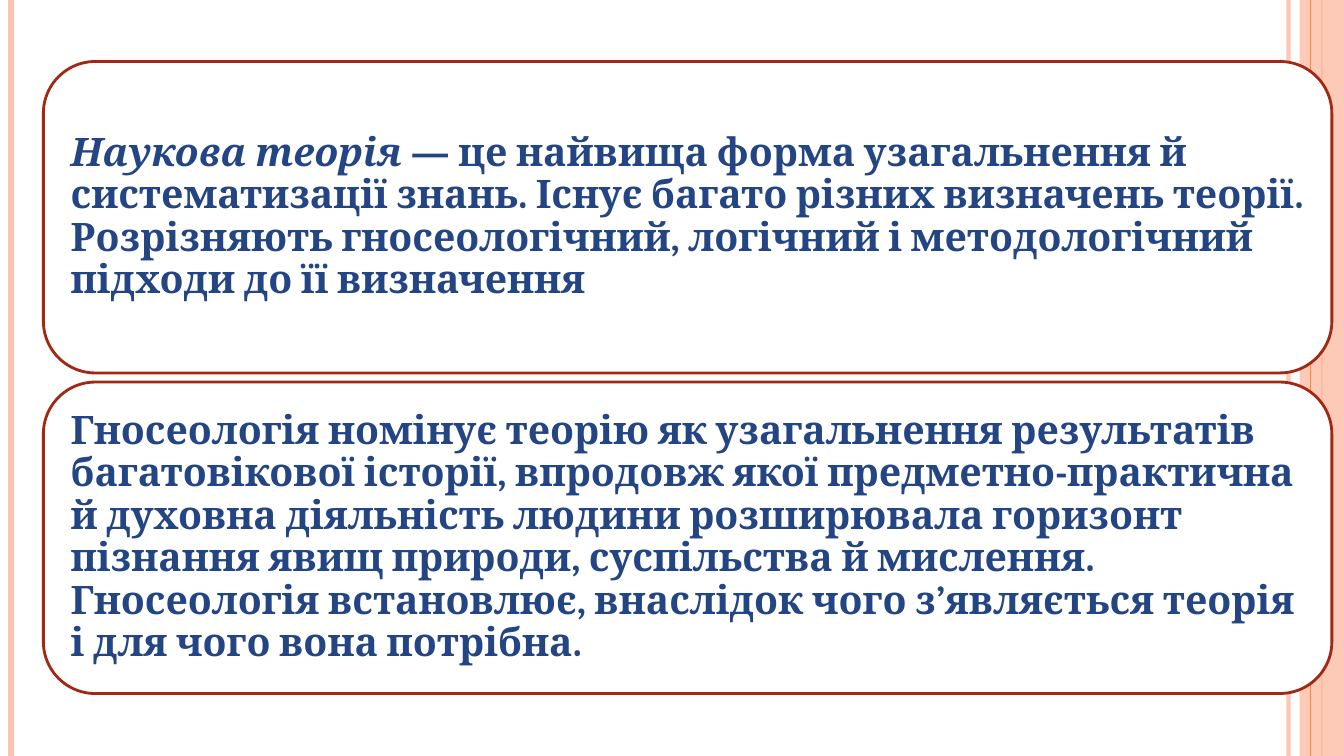
from lxml.etree import SubElement
from pptx import Presentation
from pptx.dml.color import RGBColor
from pptx.enum.shapes import MSO_CONNECTOR, MSO_SHAPE
from pptx.enum.text import MSO_ANCHOR, PP_ALIGN
from pptx.oxml.ns import qn
from pptx.util import Inches, Pt

WIDTH, HEIGHT = 13.33, 7.5
PEACH, ORANGE, RED, BLUE, WHITE = "FEC3AE", "FE8637", "A22814", "244583", "FFFFFF"

# Stripes: x, colour, width in points, opacity in percent
BACK_LINES = [(12.78, PEACH, 3, 93), (0.11, PEACH, 4.5, 100), (13.11, ORANGE, 1.5, 100)]
FRONT_LINES = [(13, ORANGE, 0.75, 100)]
BAND_LEFT, BAND_WIDTH, BAND_ALPHA = 12.89, 0.44, 87

# Cards: runs of (text, italic)
CARDS = [
    [("Наукова теорія ", True),
     ("— це найвища форма узагальнення й систематизації знань. Існує багато "
      "різних визначень теорії. Розрізняють гносеологічний, логічний і "
      "методологічний підходи до її визначення", False)],
    [("Гносеологія номінує теорію як узагальнення результатів багатовікової "
      "історії, впродовж якої предметно-практична й духовна діяльність людини "
      "розширювала горизонт пізнання явищ природи, суспільства й мислення. "
      "Гносеологія встановлює, внаслідок чого з’являється теорія і для чого "
      "вона потрібна.", False)],
]
CARD_LEFT, CARD_TOP, CARD_WIDTH, CARD_HEIGHT = 0.43, 0.61, 12.78, 3.09
CARD_GAP, INSET = 0.09, 0.12


def paint(target, color, alpha=100):
    """Give a fill a solid colour with an opacity in percent."""
    target.solid()
    target.fore_color.rgb = RGBColor.from_string(color)
    if alpha < 100:
        node = target._xPr.find(qn("a:solidFill"))[0]
        SubElement(node, qn("a:alpha")).set("val", str(alpha * 1000))


def add_stripe(slide, x, color, width, alpha):
    line = slide.shapes.add_connector(
        MSO_CONNECTOR.STRAIGHT, Inches(x), 0, Inches(x), Inches(HEIGHT))
    line.line.width = Pt(width)
    paint(line.line.fill, color, alpha)
    SubElement(line._element.spPr, qn("a:effectLst"))


def add_band(slide):
    band = slide.shapes.add_shape(
        MSO_SHAPE.RECTANGLE, Inches(BAND_LEFT), 0, Inches(BAND_WIDTH), Inches(HEIGHT))
    band.shadow.inherit = False
    band.line.fill.background()
    paint(band.fill, PEACH, BAND_ALPHA)


def add_card(slide, top, runs):
    card = slide.shapes.add_shape(
        MSO_SHAPE.ROUNDED_RECTANGLE, Inches(CARD_LEFT), Inches(top),
        Inches(CARD_WIDTH), Inches(CARD_HEIGHT))
    card.shadow.inherit = False
    paint(card.fill, WHITE)
    card.line.width = Pt(2)
    paint(card.line.fill, RED)

    frame = card.text_frame
    frame.word_wrap = True
    frame.vertical_anchor = MSO_ANCHOR.MIDDLE
    frame.margin_left = frame.margin_right = Inches(INSET)
    frame.margin_top = frame.margin_bottom = Inches(INSET)
    para = frame.paragraphs[0]
    para.alignment = PP_ALIGN.LEFT
    para.line_spacing = 0.9
    for text, italic in runs:
        run = para.add_run()
        run.text = text
        font = run.font
        font.name, font.size = "Cambria", Pt(28)
        font.bold, font.italic = True, italic
        paint(font.fill, BLUE)


def main():
    deck = Presentation()
    deck.slide_width, deck.slide_height = Inches(WIDTH), Inches(HEIGHT)
    slide = deck.slides.add_slide(deck.slide_layouts[6])
    paint(slide.background.fill, WHITE)
    for stripe in BACK_LINES:
        add_stripe(slide, *stripe)
    add_band(slide)
    for stripe in FRONT_LINES:
        add_stripe(slide, *stripe)
    for row, runs in enumerate(CARDS):
        add_card(slide, CARD_TOP + row * (CARD_HEIGHT + CARD_GAP), runs)
    deck.save("out.pptx")


if __name__ == "__main__":
    main()
